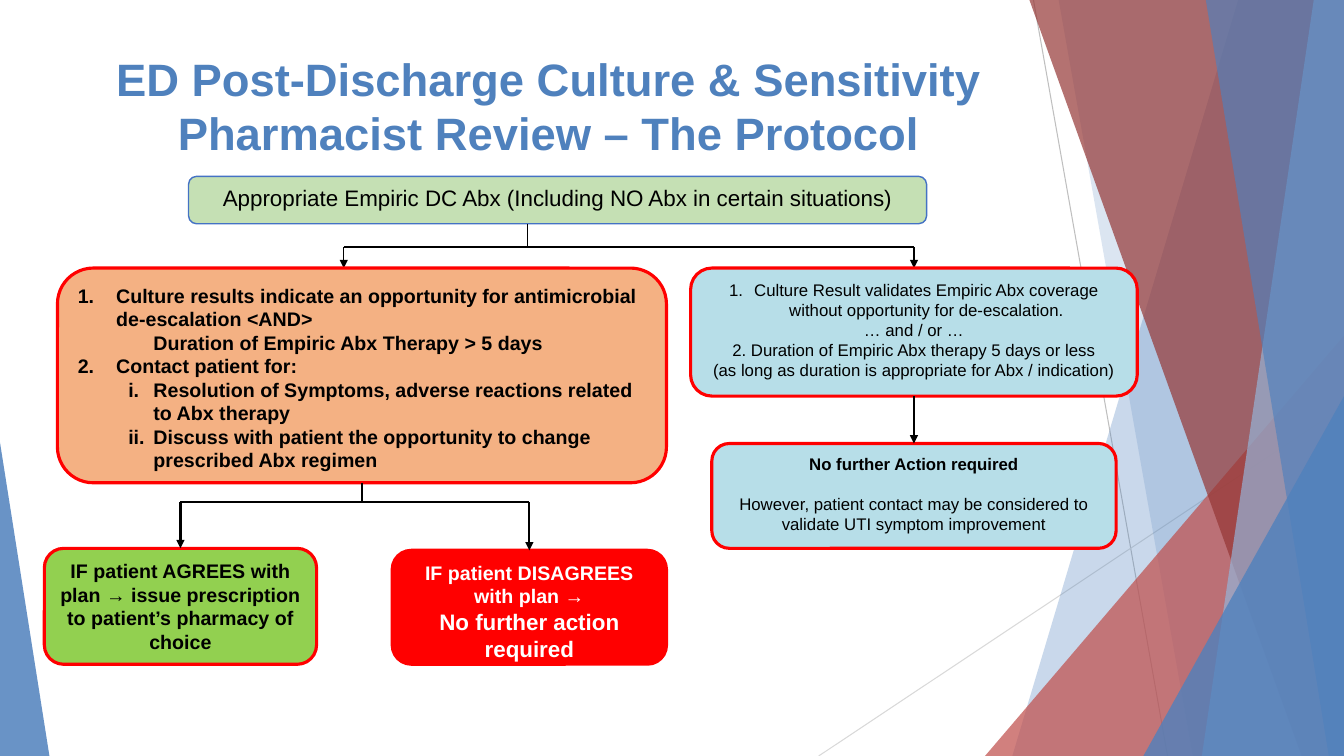
from lxml.etree import SubElement
from pptx import Presentation
from pptx.dml.color import RGBColor
from pptx.enum.shapes import MSO_CONNECTOR, MSO_SHAPE
from pptx.enum.text import MSO_ANCHOR, MSO_AUTO_SIZE, PP_ALIGN
from pptx.oxml.ns import qn
from pptx.util import Inches, Pt

# The slide is a grid of 133.3 columns by 75 rows, each a tenth of an inch.
COLS, ROWS = 133.3, 75
COLORS = {
    "blue": "4F81BD", "brick": "C0504D", "wine": "953735", "sky": "95B3D7",
    "gray": "BFBFBF", "pale": "D9D9D9", "black": "000000", "white": "FFFFFF",
    "mint": "C5E0B4", "edge": "4472C4", "peach": "F4B183", "aqua": "B7DEE8",
    "green": "92D050", "red": "FF0000",
}


def grid(n):
    return Inches(n / 10)


def tint(name):
    return RGBColor.from_string(COLORS[name])


def paint(shape, name, alpha=None):
    shape.shadow.inherit = False
    shape.fill.solid()
    shape.fill.fore_color.rgb = tint(name)
    if alpha:
        color = shape.fill._xPr.find(".//" + qn("a:srgbClr"))
        SubElement(color, qn("a:alpha")).set("val", str(alpha * 1000))


def wire(slide, start, end, name="black", width=1, head=False):
    line = slide.shapes.add_connector(
        MSO_CONNECTOR.STRAIGHT, *map(grid, (*start, *end)))
    line.line.color.rgb = tint(name)
    line.line.width = Pt(width)
    if head:
        SubElement(line.line._get_or_add_ln(), qn("a:tailEnd")).set("type", "triangle")
    SubElement(line._element.spPr, qn("a:effectLst"))
    return line


def write(par, text, size, name="black", bold=False):
    run = par.add_run()
    run.text = text
    run.font.name = "Arial"
    run.font.size = Pt(size)
    run.font.bold = bold
    run.font.color.rgb = tint(name)


def indent(par, left, hang=0, style=None, start=1, level=0):
    """Set a paragraph's left and hanging indents in inches, and its numbering."""
    par.level = level
    props = par._p.get_or_add_pPr()
    props.set("marL", str(Inches(left)))
    props.set("indent", str(-Inches(hang)))
    if style:
        mark = SubElement(props, qn("a:buAutoNum"))
        mark.set("type", style)
        if start > 1:
            mark.set("startAt", str(start))


def card(slide, box, fill, lines, size, ink="black", bold=False,
         align=PP_ALIGN.CENTER, edge="red", width=2.25):
    shape = slide.shapes.add_shape(MSO_SHAPE.ROUNDED_RECTANGLE, *map(grid, box))
    paint(shape, fill)
    shape.line.color.rgb = tint(edge)
    shape.line.width = Pt(width)
    frame = shape.text_frame
    frame.word_wrap = True
    frame.vertical_anchor = MSO_ANCHOR.TOP
    for i, text in enumerate(lines):
        par = frame.add_paragraph() if i else frame.paragraphs[0]
        par.alignment = align
        write(par, text, size, ink, bold)
    return shape


def facets(slide, box):
    x, y, w, h = box
    right, base = x + w, y + h
    wire(slide, (x + 102.5, y), (x + 115.8, base), "gray", 0.75)
    wire(slide, (right, y + 40.3), (x + 81.2, base), "pale", 0.75)

    def pane(top, foot, name, alpha):
        build = slide.shapes.build_freeform(grid(x + top), grid(y))
        build.add_line_segments([(grid(a), grid(b)) for a, b in (
            (right, y), (right, base), (x + foot, base))])
        shape = build.convert_to_shape()
        paint(shape, name, alpha)
        shape.line.fill.background()

    def wedge(left, top, width, peak, name, alpha):
        shape = slide.shapes.add_shape(MSO_SHAPE.ISOSCELES_TRIANGLE, *map(
            grid, (x + left, y + top, width, h - top)))
        shape.adjustments[0] = peak
        paint(shape, name, alpha)
        shape.line.fill.background()

    pane(122.8, 100.4, "blue", 30)
    pane(105, 118.3, "blue", 20)
    wedge(97.7, 33.3, 35.6, 1, "brick", 72)
    pane(102.1, 129.1, "wine", 70)
    pane(130.3, 119.2, "sky", 70)
    pane(119.6, 131.8, "blue", 65)
    wedge(113.4, 39.3, 19.9, 1, "blue", 80)
    wedge(0, 43.9, 4.9, 0, "blue", 85)


def heading(slide, box):
    title = slide.shapes.title
    title.left, title.top, title.width, title.height = map(grid, box)
    slide.shapes._spTree.append(title._element)
    frame = title.text_frame
    frame.word_wrap = True
    frame.auto_size = MSO_AUTO_SIZE.NONE
    frame.vertical_anchor = MSO_ANCHOR.MIDDLE
    par = frame.paragraphs[0]
    par.alignment = PP_ALIGN.CENTER
    write(par, "ED Post-Discharge Culture & Sensitivity Pharmacist Review – The Protocol",
          32.4, "blue", True)


def start(slide, box):
    """Draw the first step and the bar that splits into two branches."""
    x, y, w, h = box
    card(slide, (x, y, w, 4.7), "mint",
         ["Appropriate Empiric DC Abx (Including NO Abx in certain situations)"],
         16, edge="edge", width=1)
    bar = y + 7
    left, right = x + 15.4, x + 71.95
    wire(slide, (x + 33.6, y + 4.7), (x + 33.6, bar))
    wire(slide, (left, bar), (right, bar))
    wire(slide, (left, bar), (left, y + h), head=True)
    return wire(slide, (right, bar), (right, y + h), head=True)


def change(slide, box):
    """Draw the de-escalation branch and its two outcomes."""
    x, y, w, h = box
    review = card(slide, (x + 1.3, y, w - 1.3, 21.3), "peach", [
        "Culture results indicate an opportunity for antimicrobial de-escalation <AND>",
        "Duration of Empiric Abx Therapy > 5 days",
        "Contact patient for:",
        "Resolution of Symptoms, adverse reactions related to Abx therapy",
        "Discuss with patient the opportunity to change prescribed Abx regimen",
    ], 14, bold=True, align=PP_ALIGN.LEFT)
    pars = review.text_frame.paragraphs
    indent(pars[0], 0.38, 0.38, "arabicPeriod")
    indent(pars[1], 0.75)
    indent(pars[2], 0.38, 0.38, "arabicPeriod", start=2)
    for par in pars[3:]:
        indent(par, 0.75, 0.25, "romanLcPeriod", level=1)

    agree = (x, y + 27.8, 27, h - 27.8)
    refuse = (x + w - 27.2, y + 28, 27.2, h - 28)
    yes = card(slide, agree, "green", [
        "IF patient AGREES with plan → issue prescription to patient’s pharmacy of choice",
    ], 14, bold=True)
    no = card(slide, refuse, "red", ["IF patient DISAGREES with plan →"], 14, "white", True)
    par = no.text_frame.add_paragraph()
    par.alignment = PP_ALIGN.CENTER
    write(par, "No further action required", 16, "white", True)

    bar = y + 23.2
    stem = x + 1.3 + (w - 1.3) / 2
    wire(slide, (stem, y + 21.3), (stem, bar)).begin_connect(review, 2)
    mids = [b[0] + b[2] / 2 for b in (agree, refuse)]
    wire(slide, (mids[0], bar), (mids[1], bar), width=1.5)
    for mid, end, shape in zip(mids, (agree, refuse), (yes, no)):
        wire(slide, (mid, bar), (mid, end[1]), width=1.5, head=True).end_connect(shape, 0)


def keep(slide, box):
    """Draw the branch that needs no change and return its first card."""
    x, y, w, h = box
    valid = card(slide, (x, y, w, 12.7), "aqua", [
        "Culture Result validates Empiric Abx coverage without opportunity for de-escalation.",
        "… and / or …",
        "2. Duration of Empiric Abx therapy 5 days or less",
        "(as long as duration is appropriate for Abx / indication)",
    ], 12)
    indent(valid.text_frame.paragraphs[0], 0.25, 0.25, "arabicPeriod")
    done = card(slide, (x + 2.1, y + 17.4, w - 4.2, h - 17.4), "aqua",
                ["No further Action required"], 12, bold=True)
    par = done.text_frame.add_paragraph()
    par.alignment = PP_ALIGN.CENTER
    par.space_before = Pt(14)
    write(par, "However, patient contact may be considered to validate UTI symptom improvement", 12)
    mid = x + w / 2
    link = wire(slide, (mid, y + 12.7), (mid, y + 17.4), head=True)
    link.begin_connect(valid, 2)
    link.end_connect(done, 0)
    return valid


def main():
    deck = Presentation()
    deck.slide_width, deck.slide_height = grid(COLS), grid(ROWS)
    slide = deck.slides.add_slide(deck.slide_layouts[5])
    facets(slide, (0, 0, COLS, ROWS))
    heading(slide, (7.4, 3.9, 94, 13.1))
    drop = start(slide, (18.7, 17.5, 73.2, 9.1))
    change(slide, (4.4, 26.6, 61.7, 39.3))
    drop.end_connect(keep(slide, (68.5, 26.6, 44.3, 27.8)), 0)
    deck.save("out.pptx")


if __name__ == "__main__":
    main()
